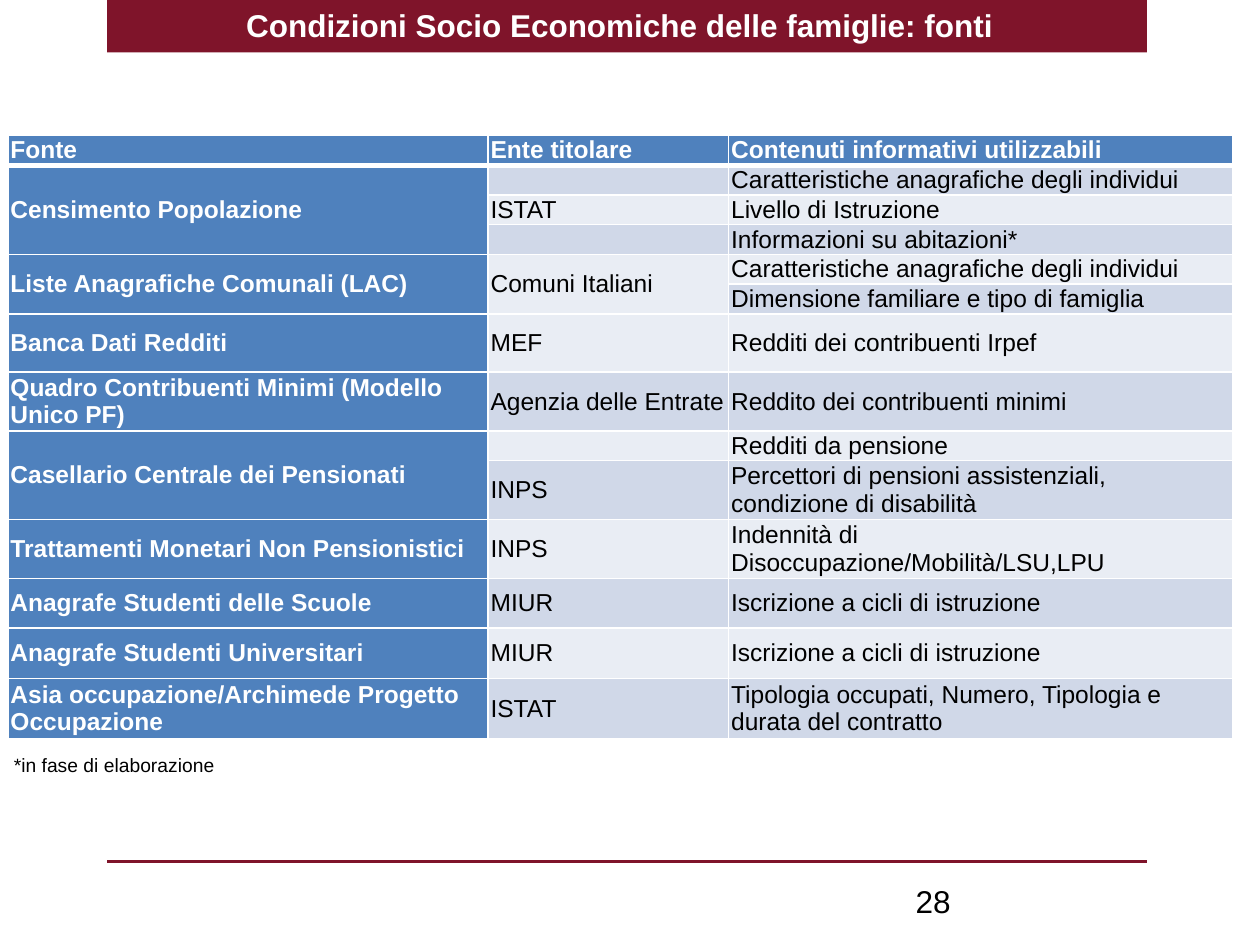
from lxml.etree import SubElement
from pptx import Presentation
from pptx.dml.color import RGBColor
from pptx.enum.shapes import MSO_CONNECTOR, MSO_SHAPE
from pptx.enum.text import MSO_ANCHOR, PP_ALIGN
from pptx.oxml.ns import qn
from pptx.util import Cm, Pt

BURGUNDY = RGBColor(0x7F, 0x14, 0x2A)
BLUE = RGBColor(0x4F, 0x81, 0xBD)
BAND_DARK = RGBColor(0xD0, 0xD8, 0xE8)
BAND_LIGHT = RGBColor(0xE9, 0xED, 0xF4)
WHITE = RGBColor(0xFF, 0xFF, 0xFF)
BLACK = RGBColor(0, 0, 0)

COL_WIDTHS = [9.68, 4.85, 10.16]
ROW_HEIGHTS = [0.6] * 6 + [1.17, 1.19, 0.59, 1.19, 1.19, 1, 1.01, 1.22]
ROWS = [
    ("Fonte", "Ente titolare", "Contenuti informativi utilizzabili"),
    ("Censimento Popolazione", "", "Caratteristiche anagrafiche degli individui"),
    ("", "ISTAT", "Livello di Istruzione"),
    ("", "", "Informazioni su abitazioni*"),
    ("Liste Anagrafiche Comunali (LAC)", "Comuni Italiani",
     "Caratteristiche anagrafiche degli individui"),
    ("", "", "Dimensione familiare e tipo di famiglia"),
    ("Banca Dati Redditi", "MEF", "Redditi dei contribuenti Irpef"),
    ("Quadro Contribuenti Minimi (Modello Unico PF)", "Agenzia delle Entrate",
     "Reddito dei contribuenti minimi"),
    ("Casellario Centrale dei Pensionati", "", "Redditi da pensione"),
    ("", "INPS", "Percettori di pensioni assistenziali, condizione di disabilità"),
    ("Trattamenti Monetari Non Pensionistici", "INPS",
     "Indennità di Disoccupazione/Mobilità/LSU,LPU"),
    ("Anagrafe Studenti delle Scuole", "MIUR", "Iscrizione a cicli di istruzione"),
    ("Anagrafe Studenti Universitari", "MIUR", "Iscrizione a cicli di istruzione"),
    ("Asia occupazione/Archimede Progetto Occupazione", "ISTAT",
     "Tipologia occupati, Numero, Tipologia e durata del contratto"),
]
MERGES = [((1, 0), (3, 0)), ((4, 0), (5, 0)), ((4, 1), (5, 1)), ((8, 0), (9, 0))]


def style_font(p, size, color, bold=False):
    """Set the font of a whole paragraph."""
    p.font.name = "Arial"
    p.font.size = Pt(size)
    p.font.bold = bold
    p.font.color.rgb = color


def add_bar(s, x, y, w, h):
    """Add the filled band behind the title."""
    sp = s.shapes.add_shape(MSO_SHAPE.RECTANGLE, Cm(x), Cm(y), Cm(w), Cm(h))
    sp.shadow.inherit = False
    sp.fill.solid()
    sp.fill.fore_color.rgb = BURGUNDY
    sp.line.fill.background()


def add_rule(s, x1, x2, y):
    """Add a horizontal rule."""
    ln = s.shapes.add_connector(MSO_CONNECTOR.STRAIGHT, Cm(x1), Cm(y), Cm(x2), Cm(y))
    ln.line.color.rgb = BURGUNDY
    ln.line.width = Pt(2)
    SubElement(ln._element.spPr, qn("a:effectLst"))


def add_text(s, text, x, y, w, h, size, color=BLACK, bold=False, align=PP_ALIGN.LEFT):
    """Add a one-paragraph text box."""
    tf = s.shapes.add_textbox(Cm(x), Cm(y), Cm(w), Cm(h)).text_frame
    tf.word_wrap = True
    p = tf.paragraphs[0]
    p.text = text
    p.alignment = align
    style_font(p, size, color, bold)


def set_borders(cell, top, bottom):
    """Draw white borders around a cell, with top and bottom widths in points."""
    tcPr = cell._tc.get_or_add_tcPr()
    for side, width in (("L", 1), ("R", 1), ("T", top), ("B", bottom)):
        ln = SubElement(tcPr, qn(f"a:ln{side}"), w=str(Pt(width)))
        fill = SubElement(ln, qn("a:solidFill"))
        SubElement(fill, qn("a:srgbClr"), val=str(WHITE))


def fill_cell(cell, text, row, col):
    """Write and style one table cell."""
    heading = row == 0 or col == 0
    cell.margin_left = cell.margin_right = Cm(0.05)
    cell.margin_top = cell.margin_bottom = 0
    cell.vertical_anchor = MSO_ANCHOR.MIDDLE
    set_borders(cell, 3 if row == 1 else 1, 3 if row == 0 else 1)
    cell.fill.solid()
    band = BAND_DARK if row % 2 else BAND_LIGHT
    cell.fill.fore_color.rgb = BLUE if heading else band
    p = cell.text_frame.paragraphs[0]
    if text:
        p.text = text
    else:
        SubElement(p._p, qn("a:endParaRPr"), sz="1400")
    style_font(p, 14, WHITE if heading else BLACK, heading)


def add_sources_table(s, x, y):
    """Add the table of data sources."""
    table = s.shapes.add_table(len(ROWS), len(COL_WIDTHS), Cm(x), Cm(y),
                               Cm(sum(COL_WIDTHS)), Cm(sum(ROW_HEIGHTS))).table
    for column, width in zip(table.columns, COL_WIDTHS):
        column.width = Cm(width)
    for row, height in zip(table.rows, ROW_HEIGHTS):
        row.height = Cm(height)
    for i, texts in enumerate(ROWS):
        for j, text in enumerate(texts):
            fill_cell(table.cell(i, j), text, i, j)
    for first, last in MERGES:
        table.cell(*first).merge(table.cell(*last))


def main():
    """Build the slide and save it."""
    prs = Presentation()
    prs.slide_width, prs.slide_height = Cm(25.4), Cm(19.05)
    s = prs.slides.add_slide(prs.slide_layouts[6])
    add_bar(s, 2.16, 0, 20.96, 1.06)
    add_rule(s, 2.16, 23.12, 17.37)
    add_text(s, "Condizioni Socio Economiche delle famiglie: fonti",
             1.98, 0, 21.03, 1.12, 18, WHITE, True, PP_ALIGN.CENTER)
    add_sources_table(s, 0.16, 2.73)
    add_text(s, "*in fase di elaborazione", 0.03, 15.06, 11, 0.74, 11)
    add_text(s, "28", 18.21, 17.65, 5.92, 1.02, 18)
    prs.save("out.pptx")


if __name__ == "__main__":
    main()
